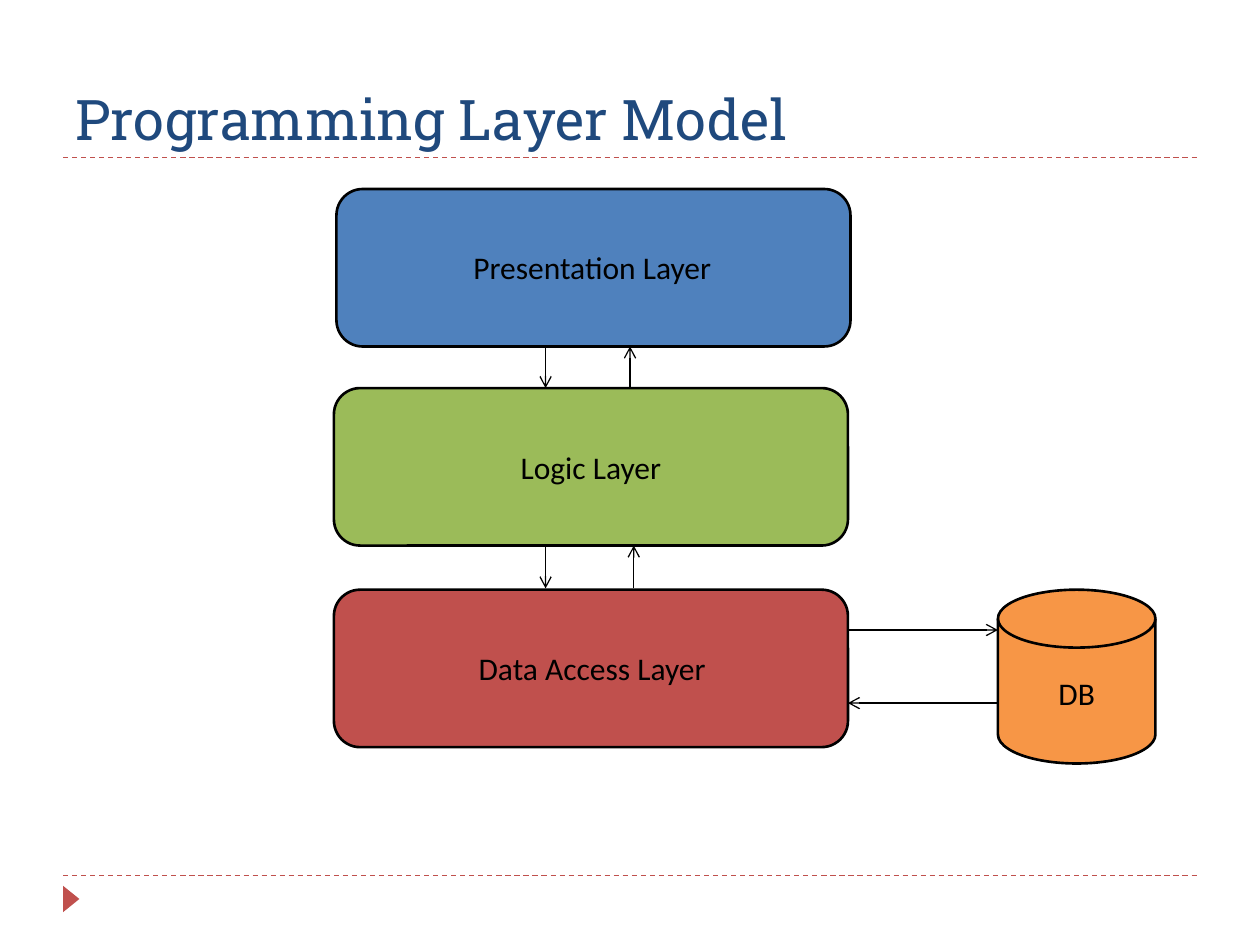
"""Build the programming layer model slide."""
import pptx
import pptx.util
import pptx.dml.color
import pptx.enum.dml
import pptx.enum.shapes
import pptx.enum.text
import pptx.oxml
import pptx.oxml.ns

Inches = pptx.util.Inches
Pt = pptx.util.Pt
RGBColor = pptx.dml.color.RGBColor
KIND = pptx.enum.shapes.MSO_SHAPE
ANCHOR = pptx.enum.text.MSO_ANCHOR
ALIGN = pptx.enum.text.PP_ALIGN

NAVY = RGBColor(0x1F, 0x49, 0x7D)
BLUE = RGBColor(0x4F, 0x81, 0xBD)
GREEN = RGBColor(0x9B, 0xBB, 0x59)
RED = RGBColor(0xC0, 0x50, 0x4D)
ORANGE = RGBColor(0xF7, 0x96, 0x46)
BLACK = RGBColor(0, 0, 0)

TITLE = "Programming Layer Model"
LAYER = (4.08, 1.25)
DISK = (1.25, 1.38)
LABEL_H = 0.4
NODES = [
    ("Presentation Layer", KIND.ROUNDED_RECTANGLE, BLUE, (2.67, 1.5), LAYER, (3.49, 1.92), 2.42),
    ("Logic Layer", KIND.ROUNDED_RECTANGLE, GREEN, (2.65, 3.08), LAYER, (3.48, 3.51), 2.42),
    ("Data Access Layer", KIND.ROUNDED_RECTANGLE, RED, (2.65, 4.68), LAYER, (3.49, 5.1), 2.42),
    ("DB", KIND.FLOWCHART_MAGNETIC_DISK, ORANGE, (7.92, 4.68), DISK, (8.2, 5.3), 0.69),
]
ARROWS = [
    (4.33, 2.75, 4.33, 3.08),
    (5, 3.08, 5, 2.75),
    (4.33, 4.33, 4.33, 4.67),
    (5.03, 4.67, 5.03, 4.33),
    (6.73, 5, 7.92, 5),
    (7.92, 5.58, 6.73, 5.58),
]
RULES = [1.25, 6.95]


def add_box(slide, kind, place, size, fill, edge=None, width=0.75):
    shape = slide.shapes.add_shape(kind, *map(Inches, place + size))
    shape.shadow.inherit = False
    shape.fill.solid()
    shape.fill.fore_color.rgb = fill
    if edge is None:
        shape.line.fill.background()
    else:
        shape.line.color.rgb = edge
        shape.line.width = Pt(width)
    return shape


def add_line(slide, ends, color):
    line = slide.shapes.add_connector(
        pptx.enum.shapes.MSO_CONNECTOR.STRAIGHT, *map(Inches, ends))
    line.line.color.rgb = color
    line.line.width = Pt(0.75)
    pptx.oxml.ns.qn("a:effectLst")
    props = line._element.spPr
    props.append(props.makeelement(pptx.oxml.ns.qn("a:effectLst"), {}))
    return line


def add_arrow(slide, ends):
    stroke = add_line(slide, ends, BLACK).line._get_or_add_ln()
    stroke.append(stroke.makeelement(pptx.oxml.ns.qn("a:tailEnd"), {"type": "arrow"}))


def set_text(shape, text, face, size, color, align, anchor):
    frame = shape.text_frame
    frame.text = text
    frame.word_wrap = True
    frame.vertical_anchor = anchor
    para = frame.paragraphs[0]
    para.alignment = align
    font = para.runs[0].font
    font.name = face
    font.size = Pt(size)
    font.color.rgb = color


def main():
    deck = pptx.Presentation()
    deck.slide_width, deck.slide_height = Inches(10), Inches(7.5)
    slide = deck.slides.add_slide(deck.slide_layouts[6])

    for y in RULES:
        rule = add_line(slide, (0.5, y, 9.5, y), RED)
        rule.line.dash_style = pptx.enum.dml.MSO_LINE.DASH
    mark = add_box(slide, KIND.ISOSCELES_TRIANGLE, (0.46, 7.07), (0.21, 0.13), RED)
    mark.rotation = 90

    title = slide.shapes.add_textbox(*map(Inches, (0.5, 0.17, 9, 1.08)))
    set_text(title, TITLE, "Roboto Slab", 32, NAVY, ALIGN.LEFT, ANCHOR.BOTTOM)

    for name, kind, fill, place, size, spot, width in NODES:
        add_box(slide, kind, place, size, fill, BLACK, 1.5)
        label = add_box(slide, KIND.RECTANGLE, spot, (width, LABEL_H), fill, fill)
        set_text(label, name, "Calibri", 18, BLACK, ALIGN.CENTER, ANCHOR.TOP)
    for ends in ARROWS:
        add_arrow(slide, ends)

    deck.save("out.pptx")


if __name__ == "__main__":
    main()
